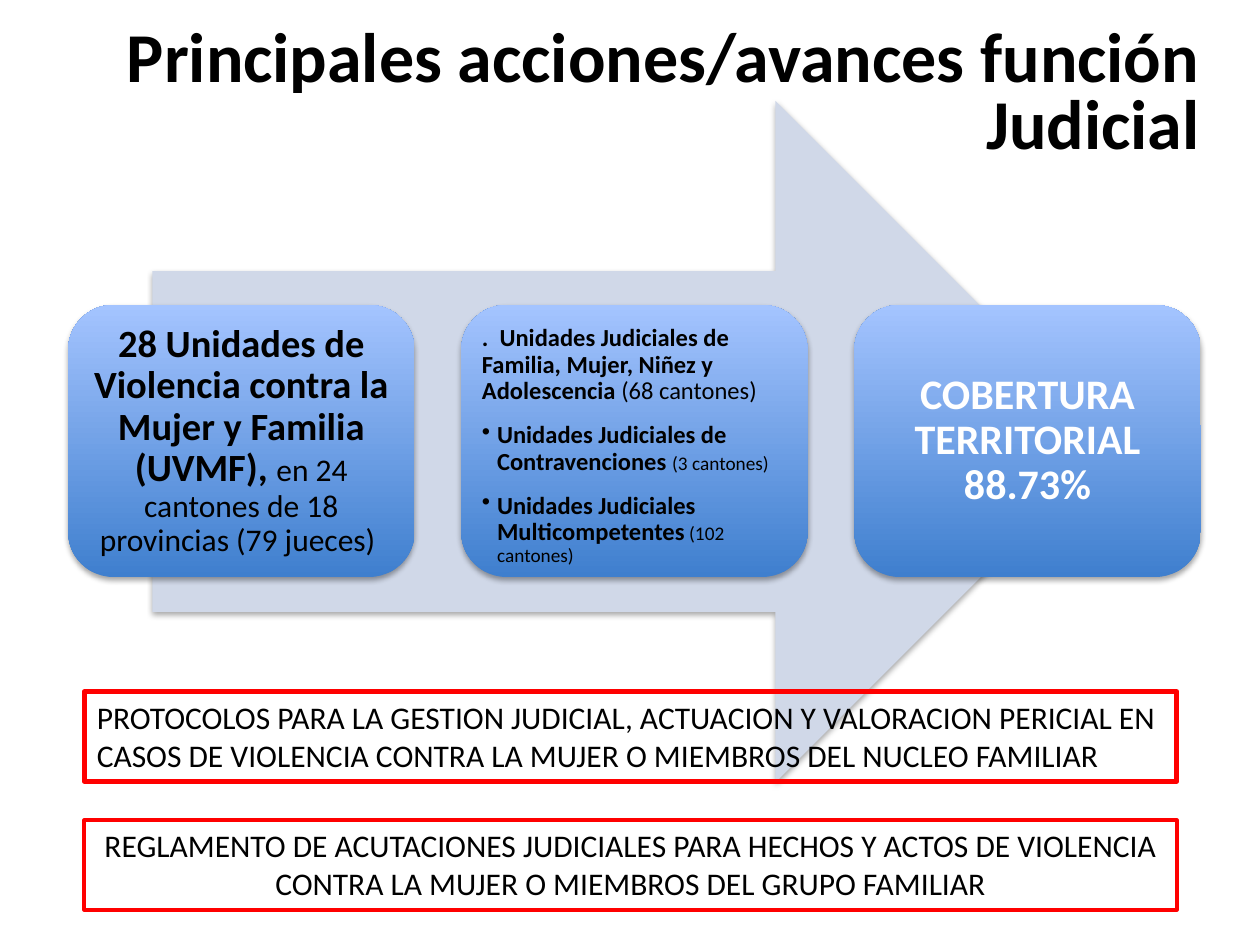
from lxml.etree import SubElement
from pptx import Presentation
from pptx.dml.color import RGBColor
from pptx.enum.shapes import MSO_SHAPE as SHAPE
from pptx.enum.text import MSO_ANCHOR as ANCHOR, MSO_AUTO_SIZE as AUTO, PP_ALIGN as ALIGN
from pptx.oxml.ns import qn
from pptx.util import Inches, Pt

BLACK = RGBColor(0x00, 0x00, 0x00)
WHITE = RGBColor(0xFF, 0xFF, 0xFF)
RED = RGBColor(0xFF, 0x00, 0x00)
PALE_BLUE = RGBColor(0xD0, 0xD8, 0xE8)
DEEP_BLUE = RGBColor(0x3F, 0x7F, 0xCE)
LIGHT_BLUE = RGBColor(0xA4, 0xC4, 0xFF)
FONT = "Calibri"

# Content: a paragraph is a list of runs (text, size, bold)
TITLE = "Principales acciones/avances función Judicial"
CARDS = [
    dict(color=BLACK, inset=0.09, after=7.7, bullets=False, paragraphs=[
        [("28 Unidades de Violencia contra la Mujer y Familia (UVMF), ", 22, True),
         ("en 24 cantones de 18 provincias (79 jueces) ", 18, False)]]),
    dict(color=BLACK, inset=0.06, after=10, bullets=True, paragraphs=[
        [(".  Unidades Judiciales de Familia, Mujer, Niñez y Adolescencia ", 14, True),
         ("(68 cantones)", 14, False)],
        [("Unidades Judiciales de Contravenciones ", 14, True),
         ("(3 cantones)", 11, False)],
        [("Unidades Judiciales Multicompetentes", 14, True),
         (" (102 cantones)", 11, False)]]),
    dict(color=WHITE, inset=0.1, after=8.4, bullets=False, paragraphs=[
        [("COBERTURA TERRITORIAL 88.73%", 24, True)]]),
]
NOTES = [  # text, alignment, border width
    ("PROTOCOLOS PARA LA GESTION JUDICIAL, ACTUACION Y VALORACION PERICIAL EN "
     "CASOS DE VIOLENCIA CONTRA LA MUJER O MIEMBROS DEL NUCLEO FAMILIAR", ALIGN.LEFT, 3),
    ("REGLAMENTO DE ACUTACIONES JUDICIALES PARA HECHOS Y ACTOS DE VIOLENCIA "
     "CONTRA LA MUJER O MIEMBROS DEL GRUPO FAMILIAR", ALIGN.CENTER, 2.25),
]

# Layout in inches
CARD_LEFT, CARD_TOP, CARD_W, CARD_H, CARD_STEP = 0.54, 2.42, 2.75, 2.16, 3.12
NOTE_LEFT, NOTE_TOP, NOTE_W, NOTE_H, NOTE_STEP = 0.67, 5.49, 8.67, 0.71, 1.02


def add_shape(s, kind, *box):
    sp = s.shapes.add_shape(kind, *map(Inches, box))
    sp.shadow.inherit = False
    return sp


def drop_shadow(sp):
    effects = sp._element.spPr.find(qn("a:effectLst"))
    shadow = SubElement(effects, qn("a:outerShdw"), blurRad=str(Pt(3.1)), dist=str(Pt(1.8)),
                        dir="5400000", rotWithShape="0")
    color = SubElement(shadow, qn("a:srgbClr"), val=str(BLACK))
    SubElement(color, qn("a:alpha"), val="35000")


def set_font(r, size, color, bold=False):
    r.font.name, r.font.size, r.font.bold = FONT, Pt(size), bold
    r.font.color.rgb = color


def add_bullet(p):
    pPr = p._p.get_or_add_pPr()
    pPr.set("marL", str(Inches(0.12)))
    pPr.set("indent", str(Inches(-0.12)))
    SubElement(pPr, qn("a:buChar"), char="•")


def add_card(s, left, card):
    sp = add_shape(s, SHAPE.ROUNDED_RECTANGLE, left, CARD_TOP, CARD_W, CARD_H)
    sp.fill.gradient()
    sp.fill.gradient_angle = 90
    for stop, color in zip(sp.fill.gradient_stops, (DEEP_BLUE, LIGHT_BLUE)):
        stop.color.rgb = color
    sp.line.fill.background()
    drop_shadow(sp)
    tf = sp.text_frame
    tf.word_wrap = True
    tf.margin_left = tf.margin_right = tf.margin_top = tf.margin_bottom = Inches(card["inset"])
    tf.vertical_anchor = ANCHOR.TOP if card["bullets"] else ANCHOR.MIDDLE
    for i, runs in enumerate(card["paragraphs"]):
        p = tf.add_paragraph() if i else tf.paragraphs[0]
        p.alignment = ALIGN.LEFT if card["bullets"] else ALIGN.CENTER
        p.line_spacing, p.space_after = 0.9, Pt(card["after"])
        if i and card["bullets"]:
            p.level = 1
            add_bullet(p)
        for text, size, bold in runs:
            r = p.add_run()
            r.text = text
            set_font(r, size, card["color"], bold)


prs = Presentation()
prs.slide_width, prs.slide_height = Inches(10), Inches(7.5)
s = prs.slides.add_slide(prs.slide_layouts[5])

# Title
title = s.shapes.title
title.left, title.top, title.width, title.height = map(Inches, (0.32, 0.3, 9.3, 0.92))
tf = title.text_frame
tf.text = TITLE
tf.word_wrap, tf.auto_size, tf.vertical_anchor = True, AUTO.NONE, ANCHOR.MIDDLE
p = tf.paragraphs[0]
p.alignment, p.line_spacing = ALIGN.RIGHT, 0.8
set_font(p.runs[0], 40, BLACK, True)

# Arrow behind the cards
arrow = add_shape(s, SHAPE.RIGHT_ARROW, 1.21, 0.8, 7.65, 5.41)
arrow.fill.solid()
arrow.fill.fore_color.rgb = PALE_BLUE
arrow.line.fill.background()
drop_shadow(arrow)

# Cards
for i, card in enumerate(CARDS):
    add_card(s, CARD_LEFT + i * CARD_STEP, card)

# Framed notes
for i, (text, align, border) in enumerate(NOTES):
    note = add_shape(s, SHAPE.RECTANGLE, NOTE_LEFT, NOTE_TOP + i * NOTE_STEP, NOTE_W, NOTE_H)
    note.fill.background()
    note.line.color.rgb, note.line.width = RED, Pt(border)
    tf = note.text_frame
    tf.text = text
    tf.word_wrap, tf.auto_size, tf.vertical_anchor = True, AUTO.SHAPE_TO_FIT_TEXT, ANCHOR.TOP
    p = tf.paragraphs[0]
    p.alignment = align
    set_font(p.runs[0], 18, BLACK)

prs.save("out.pptx")
